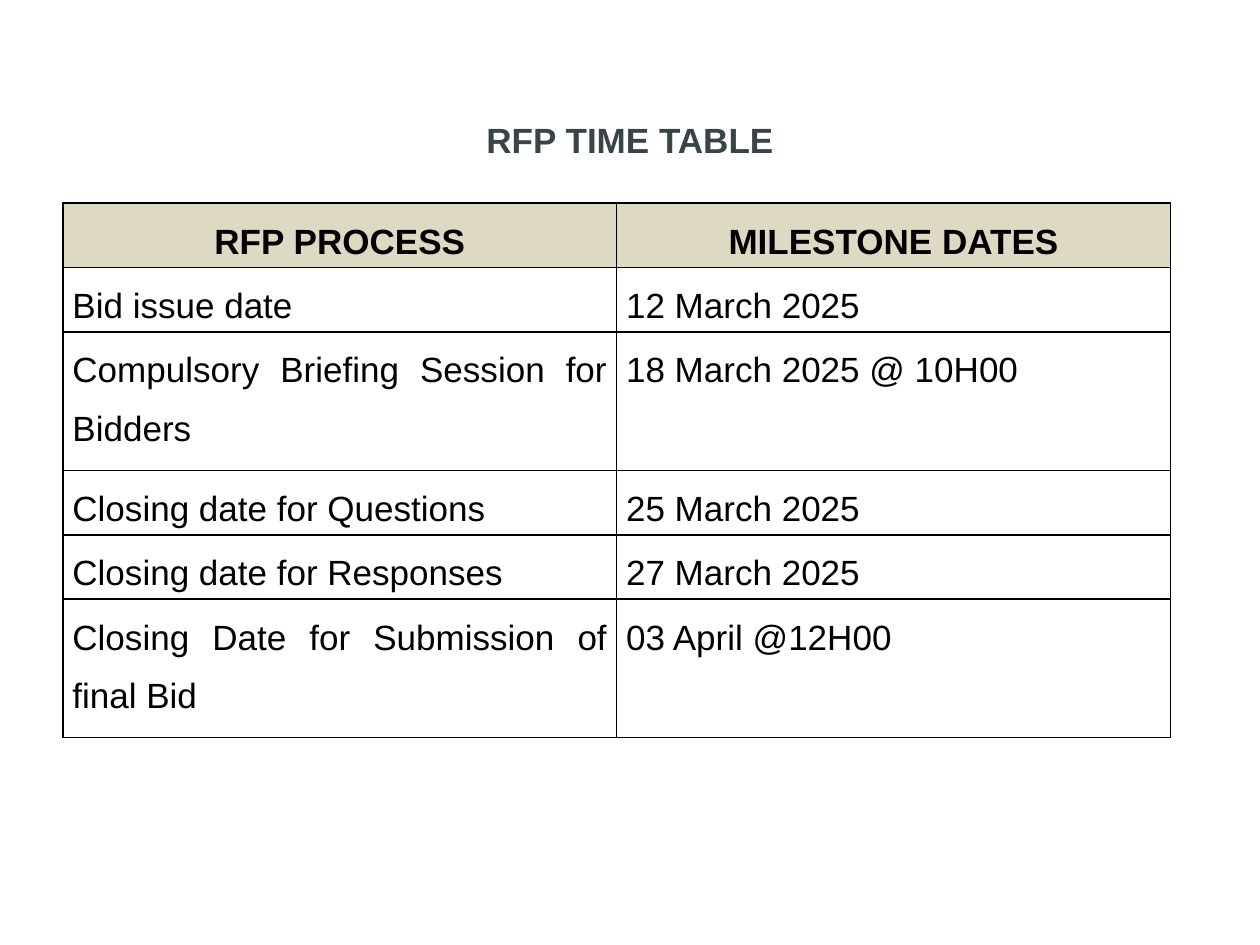
from lxml import etree
from pptx import Presentation
from pptx.dml.color import RGBColor
from pptx.enum import text
from pptx.oxml import ns
from pptx.util import Pt

TITLE = "RFP TIME TABLE"
ROWS = [
    ("RFP PROCESS", "MILESTONE DATES"),
    ("Bid issue date", "12 March 2025"),
    ("Compulsory Briefing Session for Bidders", "18 March 2025 @ 10H00"),
    ("Closing date for Questions", "25 March 2025"),
    ("Closing date for Responses", "27 March 2025"),
    ("Closing Date for Submission of final Bid", "03 April @12H00"),
]
LOW, TALL = 36.8, 79.2
HEIGHTS = [LOW, LOW, TALL, LOW, LOW, TALL]
WIDTH = 316.4
LEFT, TOP = 36, 116

BLACK = RGBColor(0, 0, 0)
SLATE = RGBColor(0x39, 0x44, 0x49)
SAND = RGBColor(0xDD, 0xD9, 0xC3)


def style(para, color, bold, align):
    para.alignment = align
    font = para.font
    font.name, font.size, font.bold = "Arial", Pt(20), bold
    font.color.rgb = color


def border(cell):
    """Draw a 1 pt black line on all four sides of the cell."""
    props = cell._tc.get_or_add_tcPr()
    for spot, side in enumerate(("lnL", "lnR", "lnT", "lnB")):
        line = etree.Element(ns.qn(f"a:{side}"), w=str(Pt(1)))
        fill = etree.SubElement(line, ns.qn("a:solidFill"))
        etree.SubElement(fill, ns.qn("a:srgbClr"), val=str(BLACK))
        props.insert(spot, line)


def fill_cell(cell, words, head):
    cell.margin_left = cell.margin_right = Pt(5.4)
    cell.margin_top = cell.margin_bottom = 0
    cell.text = words
    para = cell.text_frame.paragraphs[0]
    para.line_spacing = 1.5
    align = text.PP_ALIGN.CENTER if head else text.PP_ALIGN.JUSTIFY
    style(para, BLACK, head, align)
    if head:
        cell.fill.solid()
        cell.fill.fore_color.rgb = SAND
    else:
        cell.fill.background()
    border(cell)


def main():
    deck = Presentation()
    deck.slide_width, deck.slide_height = Pt(720), Pt(540)
    slide = deck.slides.add_slide(deck.slide_layouts[6])

    title = slide.shapes.add_textbox(Pt(LEFT), Pt(55), Pt(648), Pt(50))
    frame = title.text_frame
    frame.word_wrap = True
    frame.vertical_anchor = text.MSO_ANCHOR.MIDDLE
    frame.text = TITLE
    style(frame.paragraphs[0], SLATE, True, text.PP_ALIGN.CENTER)

    table = slide.shapes.add_table(
        len(ROWS), 2, Pt(LEFT), Pt(TOP), Pt(2 * WIDTH), Pt(sum(HEIGHTS))
    ).table
    for col in table.columns:
        col.width = Pt(WIDTH)
    for r, (row, high) in enumerate(zip(ROWS, HEIGHTS)):
        table.rows[r].height = Pt(high)
        for c, words in enumerate(row):
            fill_cell(table.cell(r, c), words, r == 0)

    deck.save("out.pptx")


if __name__ == "__main__":
    main()
